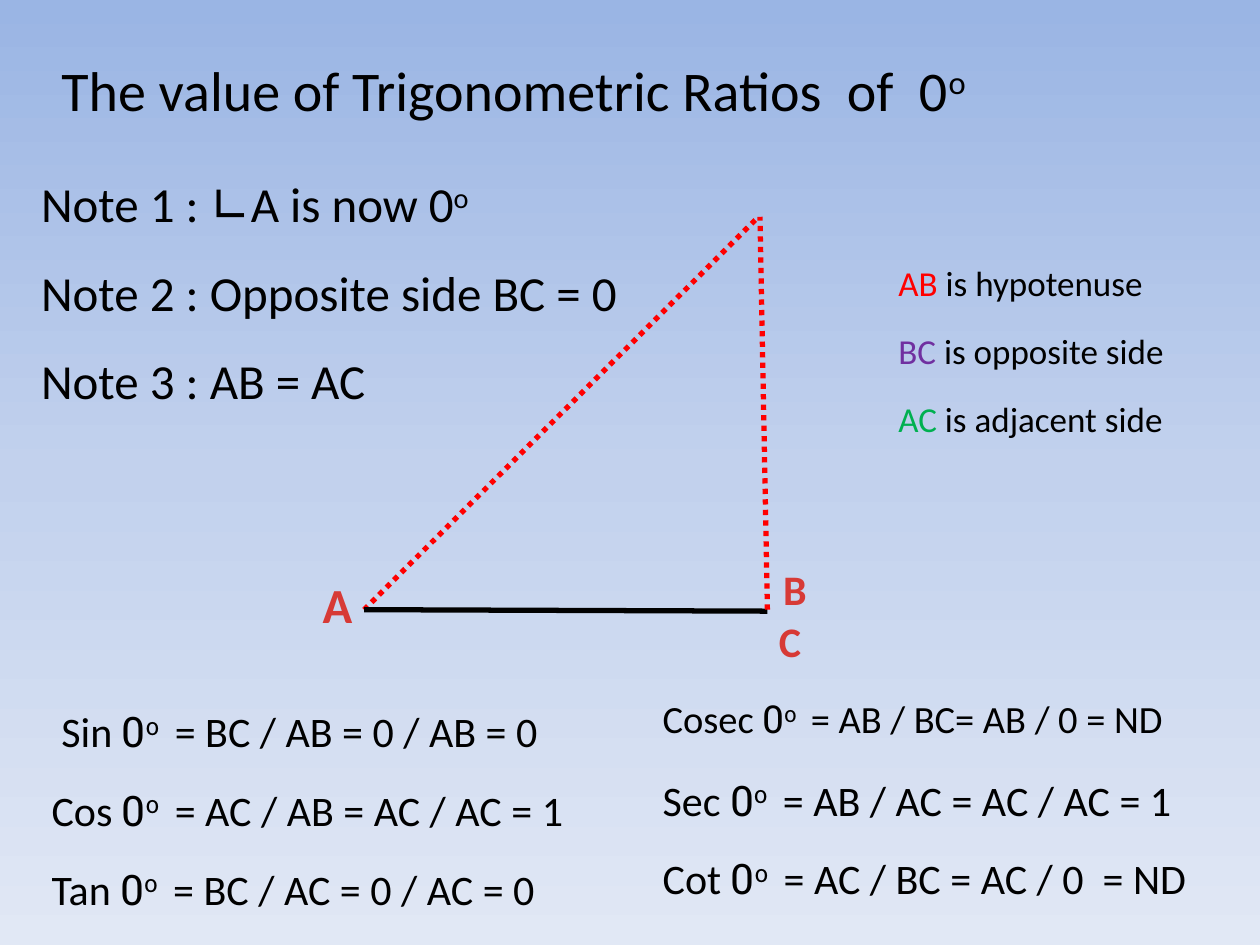
from copy import deepcopy
from typing import NamedTuple

from lxml.etree import SubElement
from pptx import Presentation
from pptx.dml.color import RGBColor
from pptx.enum.dml import MSO_LINE
from pptx.enum.shapes import MSO_CONNECTOR
from pptx.enum.text import MSO_AUTO_SIZE, PP_ALIGN
from pptx.oxml.ns import qn
from pptx.util import Cm, Pt

BLACK = RGBColor(0x00, 0x00, 0x00)
RED = RGBColor(0xFF, 0x00, 0x00)
PURPLE = RGBColor(0x70, 0x30, 0xA0)
GREEN = RGBColor(0x00, 0xB0, 0x50)
VERTEX_RED = RGBColor(0xD7, 0x3A, 0x36)
SKY_TOP = RGBColor(0x9A, 0xB5, 0xE4)
SKY_MIDDLE = RGBColor(0xC2, 0xD1, 0xED)
SKY_BOTTOM = RGBColor(0xE1, 0xE8, 0xF5)

BODY_FONT = "Calibri"
SYMBOL_FONT = "Roboto Slab"


class Run(NamedTuple):
    text: str
    color: RGBColor = BLACK
    font: str = BODY_FONT
    raised: bool = False


class Side(NamedTuple):
    start: tuple[float, float]
    end: tuple[float, float]
    color: RGBColor
    dotted: bool


class Vertex(NamedTuple):
    name: str
    left: float
    top: float
    size: int


class Ratio(NamedTuple):
    name: str
    value: str
    left: float
    size: int = 24


SIDES = [
    Side((7.34, 12.29), (15.29, 4.37), RED, True),
    Side((7.34, 12.29), (15.47, 12.32), BLACK, False),
    Side((15.47, 12.29), (15.32, 4.37), RED, True),
]
VERTICES = [
    Vertex("A", 6.07, 11.46, 28),
    Vertex("B", 15.29, 11.23, 24),
    Vertex("C", 15.19, 12.29, 24),
]
NOTES = [
    [Run("Note 1 : "), Run("∟", font=SYMBOL_FONT), Run("A is now 0"), Run("o", raised=True)],
    [Run("Note 2 : Opposite side BC = 0")],
    [Run("Note 3 : AB = AC")],
]
LEGEND = [
    [Run("AB", RED), Run(" is hypotenuse")],
    [Run("BC", PURPLE), Run(" is opposite side")],
    [Run("AC", GREEN), Run(" is adjacent side")],
]
LEFT_RATIOS = [
    Ratio("Sin", "BC / AB = 0 / AB = 0", 0.99),
    Ratio("Cos", "AC / AB = AC / AC = 1", 0.79),
    Ratio("Tan", "BC / AC = 0 / AC = 0", 0.79),
]
RIGHT_RATIOS = [
    Ratio("Cosec", "AB / BC= AB / 0 = ND", 13.11, 22),
    Ratio("Sec", "AB / AC = AC / AC = 1", 13.11),
    Ratio("Cot", "AC / BC = AC / 0  = ND", 13.11),
]


def add_text(s, runs: list[Run], *, left: float, top: float, width: float, size: int,
             bold: bool = False, align: PP_ALIGN = PP_ALIGN.LEFT) -> None:
    height = size * 0.0425 + 0.25
    sp = s.shapes.add_textbox(Cm(left), Cm(top), Cm(width), Cm(height))
    tf = sp.text_frame
    tf.word_wrap = True
    tf.auto_size = MSO_AUTO_SIZE.SHAPE_TO_FIT_TEXT
    p = tf.paragraphs[0]
    p.alignment = align
    for run in runs:
        r = p.add_run()
        r.text = run.text
        r.font.name = run.font
        r.font.size = Pt(size)
        r.font.bold = bold
        r.font.color.rgb = run.color
        if run.raised:
            r.font._element.set("baseline", "30000")


def add_side(s, side: Side) -> None:
    points = [Cm(v) for v in side.start + side.end]
    line = s.shapes.add_connector(MSO_CONNECTOR.STRAIGHT, *points)
    line.line.color.rgb = side.color
    line.line.width = Pt(3)
    if side.dotted:
        line.line.dash_style = MSO_LINE.ROUND_DOT
    SubElement(line._element.spPr, qn("a:effectLst"))


def add_ratios(s, ratios: list[Ratio], top: float) -> None:
    for i, ratio in enumerate(ratios):
        runs = [
            Run(f"{ratio.name} "),
            Run("0", font=SYMBOL_FONT),
            Run("o ", font=SYMBOL_FONT, raised=True),
            Run(f" = {ratio.value}"),
        ]
        add_text(s, runs, left=ratio.left, top=top + 1.59 * i, width=11.3, size=ratio.size)


def fill_background(s) -> None:
    fill = s.background.fill
    fill.gradient()
    fill.gradient_angle = 270
    stops = next(s._element.iter(qn("a:gsLst")))
    stops.insert(1, deepcopy(stops[0]))
    colors = [SKY_TOP, SKY_MIDDLE, SKY_BOTTOM]
    for i, (stop, color) in enumerate(zip(fill.gradient_stops, colors)):
        stop.position = i / 2
        stop.color.rgb = color


def main() -> None:
    prs = Presentation()
    prs.slide_width, prs.slide_height = Cm(25.4), Cm(19.05)
    s = prs.slides.add_slide(prs.slide_layouts[6])
    fill_background(s)

    for side in SIDES:
        add_side(s, side)
    for vertex in VERTICES:
        add_text(s, [Run(vertex.name, VERTEX_RED)], left=vertex.left, top=vertex.top,
                 width=1.47, size=vertex.size, bold=True, align=PP_ALIGN.CENTER)

    title = [Run("The value of Trigonometric Ratios  of  0"), Run("o", raised=True)]
    add_text(s, title, left=0.99, top=0.99, width=19.05, size=32)
    for i, note in enumerate(NOTES):
        add_text(s, note, left=0.58, top=3.38 + 1.78 * i, width=13.49, size=28)
    for i, entry in enumerate(LEGEND):
        add_text(s, entry, left=17.86, top=5.15 + 1.37 * i, width=6.15, size=20)
    add_ratios(s, LEFT_RATIOS, top=14.1)
    add_ratios(s, RIGHT_RATIOS, top=13.89)

    prs.save("out.pptx")


if __name__ == "__main__":
    main()
